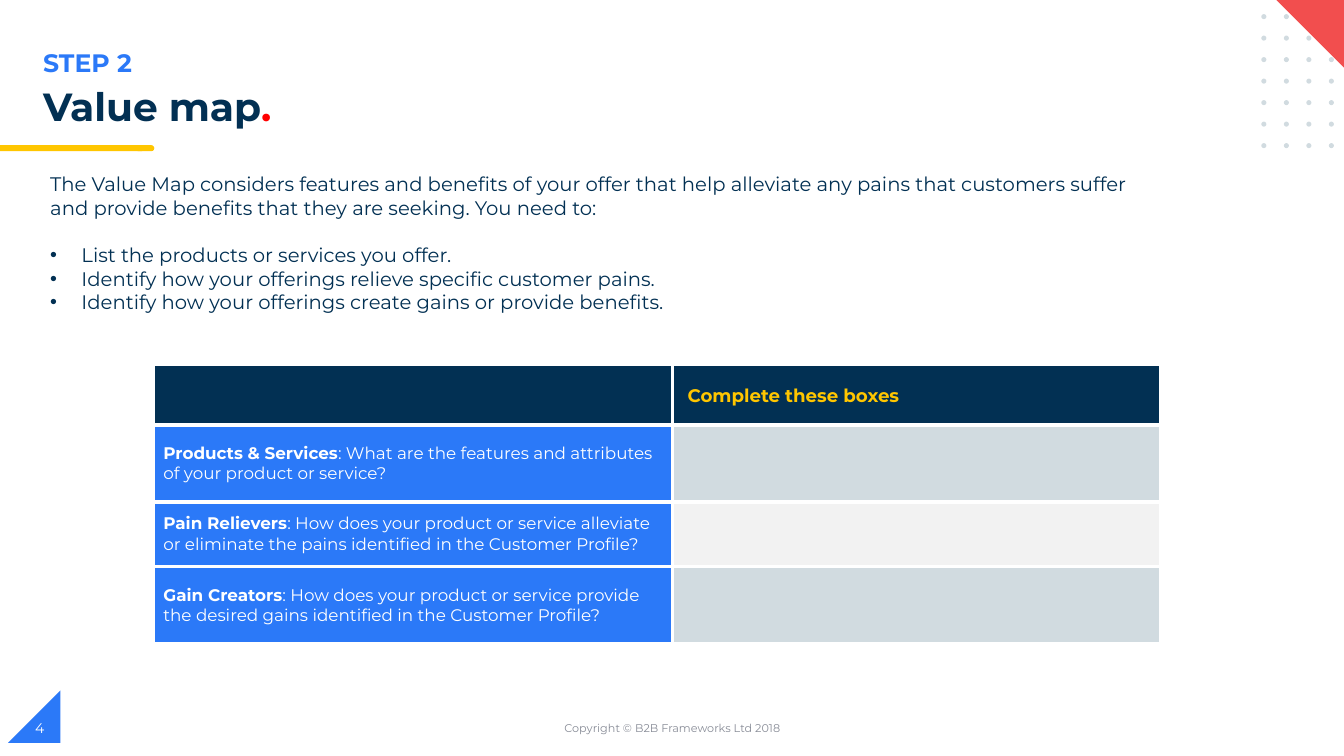
import pptx
import pptx.dml.color
import pptx.enum.shapes
import pptx.enum.text
import pptx.oxml.ns
import pptx.util
from lxml import etree

Inches = pptx.util.Inches
Pt = pptx.util.Pt
Shape = pptx.enum.shapes.MSO_SHAPE
Anchor = pptx.enum.text.MSO_ANCHOR
Align = pptx.enum.text.PP_ALIGN
qn = pptx.oxml.ns.qn

FONT = "Montserrat"
COLORS = {
    "navy": "023053", "blue": "2B79F8", "yellow": "FFC600", "coral": "F24E4E",
    "red": "FF0000", "mist": "D1DBE0", "pale": "F2F2F2", "gray": "888C97",
    "white": "FFFFFF",
}
INTRO = ("The Value Map considers features and benefits of your offer that help "
         "alleviate any pains that customers suffer and provide benefits that "
         "they are seeking. You need to:")
TASKS = [
    "List the products or services you offer.",
    "Identify how your offerings relieve specific customer pains.",
    "Identify how your offerings create gains or provide benefits.",
]
QUESTIONS = [
    ("Products & Services",
     ": What are the features and attributes of your product or service?", "mist"),
    ("Pain Relievers",
     ": How does your product or service alleviate or eliminate the pains "
     "identified in the Customer Profile?", "pale"),
    ("Gain Creators",
     ": How does your product or service provide the desired gains identified "
     "in the Customer Profile?", "mist"),
]
COLUMN_WIDTHS = [5.15, 4.84]
ROW_HEIGHTS = [0.61, 0.76, 0.64, 0.77]


def rgb(name):
    return pptx.dml.color.RGBColor.from_string(COLORS[name])


def add_span(para, text, size, color, bold=False):
    span = para.add_run()
    span.text = text
    span.font.name = FONT
    span.font.size = Pt(size)
    span.font.bold = bold
    span.font.color.rgb = rgb(color)


def add_box(page, left, top, width, height, anchor=Anchor.TOP):
    """Add a wrapping text box and return its text frame."""
    box = page.shapes.add_textbox(Inches(left), Inches(top), Inches(width), Inches(height))
    frame = box.text_frame
    frame.word_wrap = True
    frame.vertical_anchor = anchor
    return frame


def add_plain_shape(page, kind, left, top, width, height, color, rotation=0):
    shape = page.shapes.add_shape(
        kind, Inches(left), Inches(top), Inches(width), Inches(height))
    shape.shadow.inherit = False
    shape.fill.solid()
    shape.fill.fore_color.rgb = rgb(color)
    shape.line.fill.background()
    shape.rotation = rotation


def add_decoration(page):
    add_plain_shape(page, Shape.RIGHT_TRIANGLE, 0.08, 6.85, 0.52, 0.52, "blue", 270)
    add_plain_shape(page, Shape.FLOWCHART_TERMINATOR, 1.34, 1.44, 0.19, 0.06, "yellow")
    add_plain_shape(page, Shape.RECTANGLE, 0, 1.44, 1.41, 0.06, "yellow")
    for row in range(7):
        for column in range(4):
            add_plain_shape(page, Shape.OVAL, 12.51 + column * 0.67 / 3,
                            0.14 + row * 1.28 / 6, 0.05, 0.05, "mist")
    add_plain_shape(page, Shape.RIGHT_TRIANGLE, 12.65, -0.01, 0.72, 0.72, "coral", 180)


def add_bullet(para, color):
    properties = para._p.get_or_add_pPr()
    properties.set("marL", str(Inches(0.31)))
    properties.set("indent", str(-Inches(0.31)))
    bullet_color = etree.SubElement(properties, qn("a:buClr"))
    etree.SubElement(bullet_color, qn("a:srgbClr"), val=COLORS[color])
    etree.SubElement(properties, qn("a:buFont"), typeface="Arial")
    etree.SubElement(properties, qn("a:buChar"), char="•")


def add_intro(page):
    frame = add_box(page, 0.4, 1.66, 11.3, 1.52)
    add_span(frame.paragraphs[0], INTRO, 14, "navy")
    for index, task in enumerate(TASKS):
        para = frame.add_paragraph()
        add_bullet(para, "navy")
        if index == 0:
            para.space_before = Pt(17)
        add_span(para, task, 14, "navy")


def style_cell(cell, color):
    """Give the cell white borders, a fill and tight margins."""
    properties = cell._tc.get_or_add_tcPr()
    for side in ("a:lnL", "a:lnR", "a:lnT", "a:lnB"):
        border = etree.SubElement(properties, qn(side), w=str(Pt(3)))
        fill = etree.SubElement(border, qn("a:solidFill"))
        etree.SubElement(fill, qn("a:srgbClr"), val=COLORS["white"])
    cell.fill.solid()
    cell.fill.fore_color.rgb = rgb(color)
    cell.vertical_anchor = Anchor.MIDDLE
    cell.margin_left = cell.margin_right = Inches(0.1)
    cell.margin_top = cell.margin_bottom = 0


def add_value_table(page):
    table = page.shapes.add_table(
        len(ROW_HEIGHTS), len(COLUMN_WIDTHS), Inches(1.52), Inches(3.61),
        Inches(sum(COLUMN_WIDTHS)), Inches(sum(ROW_HEIGHTS))).table
    table.horz_banding = False
    for column, width in zip(table.columns, COLUMN_WIDTHS):
        column.width = Inches(width)
    for row, height in zip(table.rows, ROW_HEIGHTS):
        row.height = Inches(height)

    for column in range(len(COLUMN_WIDTHS)):
        style_cell(table.cell(0, column), "navy")
    header = table.cell(0, 1)
    header.margin_left = Inches(0.15)
    para = header.text_frame.paragraphs[0]
    para.line_spacing = 1.15
    add_span(para, "Complete these boxes", 13, "yellow", bold=True)

    for row, (topic, question, answer_color) in enumerate(QUESTIONS, start=1):
        prompt = table.cell(row, 0)
        style_cell(prompt, "blue")
        style_cell(table.cell(row, 1), answer_color)
        para = prompt.text_frame.paragraphs[0]
        add_span(para, topic, 12, "white", bold=True)
        add_span(para, question, 12, "white")


def add_headings(page):
    step = add_box(page, 0.33, 0.42, 6.69, 0.4).paragraphs[0]
    add_span(step, "STEP 2", 18, "blue", bold=True)
    title = add_box(page, 0.33, 0.82, 11.37, 0.56).paragraphs[0]
    title.line_spacing = 0.9
    add_span(title, "Value map", 28, "navy", bold=True)
    add_span(title, ".", 28, "red", bold=True)


def add_footer(page):
    notice = add_box(page, 4.42, 7.02, 4.5, 0.4, Anchor.MIDDLE).paragraphs[0]
    notice.alignment = Align.CENTER
    add_span(notice, "Copyright © B2B Frameworks Ltd 2018", 8, "gray")
    number = add_box(page, 0.25, 7.02, 3, 0.4, Anchor.MIDDLE).paragraphs[0]
    add_span(number, "4", 10, "white")


def main():
    deck = pptx.Presentation()
    deck.slide_width = Inches(13.33)
    deck.slide_height = Inches(7.5)
    page = deck.slides.add_slide(deck.slide_layouts[6])
    add_decoration(page)
    add_headings(page)
    add_footer(page)
    add_value_table(page)
    add_intro(page)
    deck.save("out.pptx")


if __name__ == "__main__":
    main()
